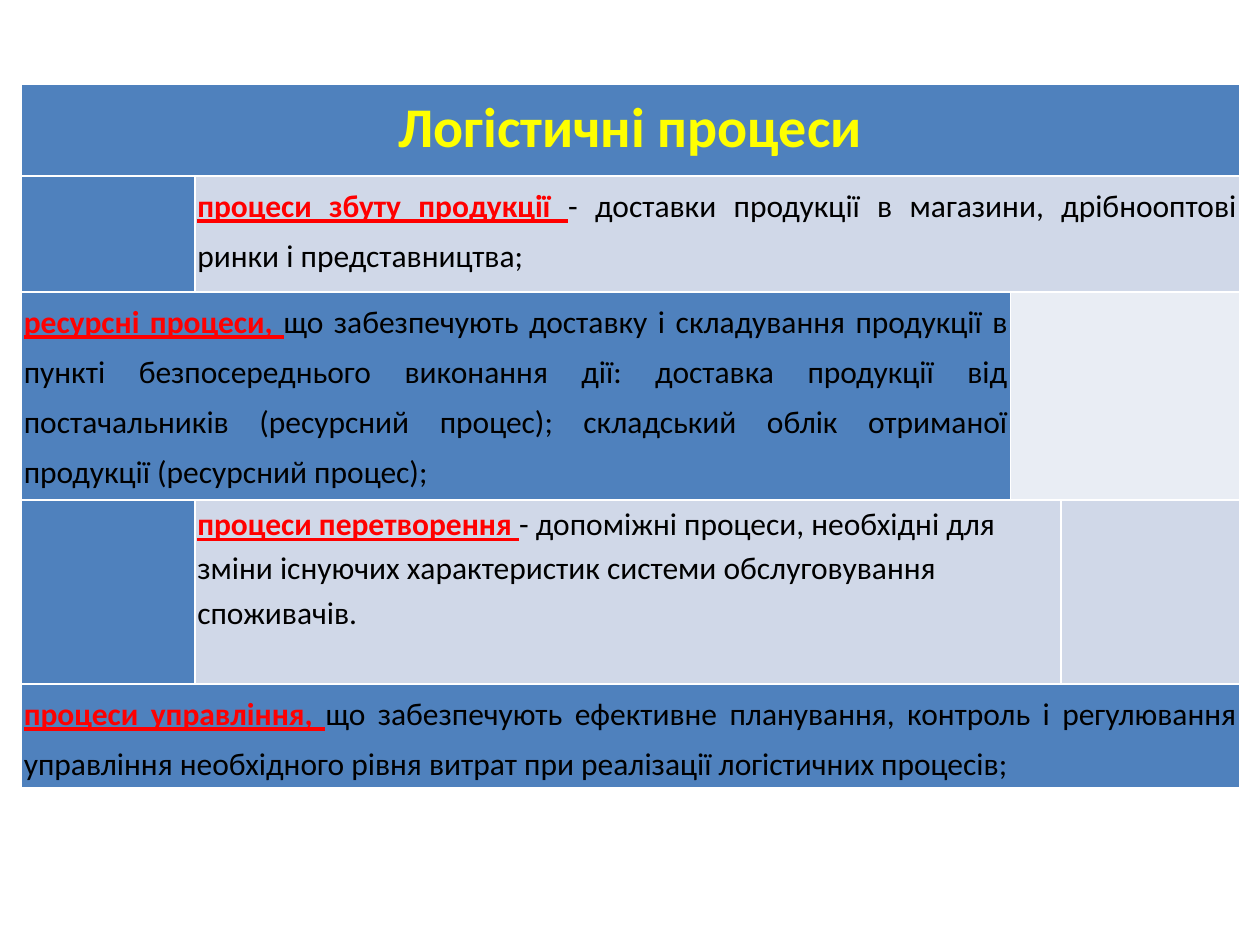
from pptx import Presentation, util as u
from pptx.dml.color import RGBColor
from pptx.enum import text

BLUE = RGBColor(0x4F, 0x81, 0xBD)
BAND = RGBColor(0xD0, 0xD8, 0xE8)
PALE = RGBColor(0xE9, 0xED, 0xF4)
YELLOW = RGBColor(0xFF, 0xFF, 0x00)
RED = RGBColor(0xFF, 0x00, 0x00)
BLACK = RGBColor(0x00, 0x00, 0x00)

FONT = "Calibri"
COLS = [3.5, 3.96, 0.74, 4.32, 1.37, 1.93, 0.43, 1.98, 0.89, 0.84, 0.51, 0.51, 3.6]
ROWS = [1.85, 2.34, 4.19, 3.71, 2.08]
CENTER, JUSTIFY, LEFT = (
    text.PP_ALIGN.CENTER, text.PP_ALIGN.JUSTIFY, text.PP_ALIGN.LEFT)

TITLE = [("Логістичні процеси", 32, YELLOW, True, False)]


def definition(term, meaning):
    """Return the runs of an underlined term and its explanation."""
    return [(term + " ", 18, RED, True, True), (meaning, 18, BLACK, False, False)]


SALES = definition(
    "процеси збуту продукції",
    "- доставки продукції в магазини, дрібнооптові ринки і представництва;")
RESOURCES = definition(
    "ресурсні процеси,",
    "що забезпечують доставку і складування продукції в пункті безпосереднього "
    "виконання дії: доставка продукції від постачальників (ресурсний процес); "
    "складський облік отриманої продукції (ресурсний процес);")
CONVERSION = definition(
    "процеси перетворення",
    "- допоміжні процеси, необхідні для зміни існуючих характеристик системи "
    "обслуговування споживачів.")
CONTROL = definition(
    "процеси управління,",
    "що забезпечують ефективне планування, контроль і регулювання управління "
    "необхідного рівня витрат при реалізації логістичних процесів;")

LAYOUT = [
    [(13, BLUE, TITLE, CENTER, 1.15)],
    [(1, BLUE, [], LEFT, 1), (12, BAND, SALES, JUSTIFY, 1.3)],
    [(10, BLUE, RESOURCES, JUSTIFY, 1.3), (3, PALE, [], LEFT, 1)],
    [(1, BLUE, [], LEFT, 1), (11, BAND, CONVERSION, LEFT, 1.15),
     (1, BAND, [], LEFT, 1)],
    [(13, BLUE, CONTROL, JUSTIFY, 1.3)],
]


def fill_cell(cell, color, runs, align, spacing):
    """Colour a cell and write its formatted runs."""
    cell.fill.solid()
    cell.fill.fore_color.rgb = color
    cell.margin_left = cell.margin_right = u.Cm(0.05)
    cell.margin_top = cell.margin_bottom = 0
    p = cell.text_frame.paragraphs[0]
    p.alignment = align
    p.line_spacing = spacing
    for words, size, ink, bold, underline in runs:
        r = p.add_run()
        r.text = words
        r.font.name = FONT
        r.font.size = u.Pt(size)
        r.font.color.rgb = ink
        r.font.bold = bold
        r.font.underline = underline


def add_process_table(s, left, top, width, height):
    """Place the table of logistics processes in the given box."""
    table = s.shapes.add_table(len(ROWS), len(COLS), left, top, width, height).table
    table.first_col = True
    for column, share in zip(table.columns, COLS):
        column.width = int(width * share / sum(COLS))
    for row, share in zip(table.rows, ROWS):
        row.height = int(height * share / sum(ROWS))
    for i, cells in enumerate(LAYOUT):
        j = 0
        for span, *content in cells:
            cell = table.cell(i, j)
            if span > 1:
                cell.merge(table.cell(i, j + span - 1))
            fill_cell(cell, *content)
            j += span


def main():
    """Build and save the slide."""
    prs = Presentation()
    prs.slide_width, prs.slide_height = u.Cm(25.4), u.Cm(19.05)
    s = prs.slides.add_slide(prs.slide_layouts[6])
    add_process_table(s, u.Cm(0.43), u.Cm(1.7), u.Cm(24.56), u.Cm(14.17))
    prs.save("out.pptx")


if __name__ == "__main__":
    main()
